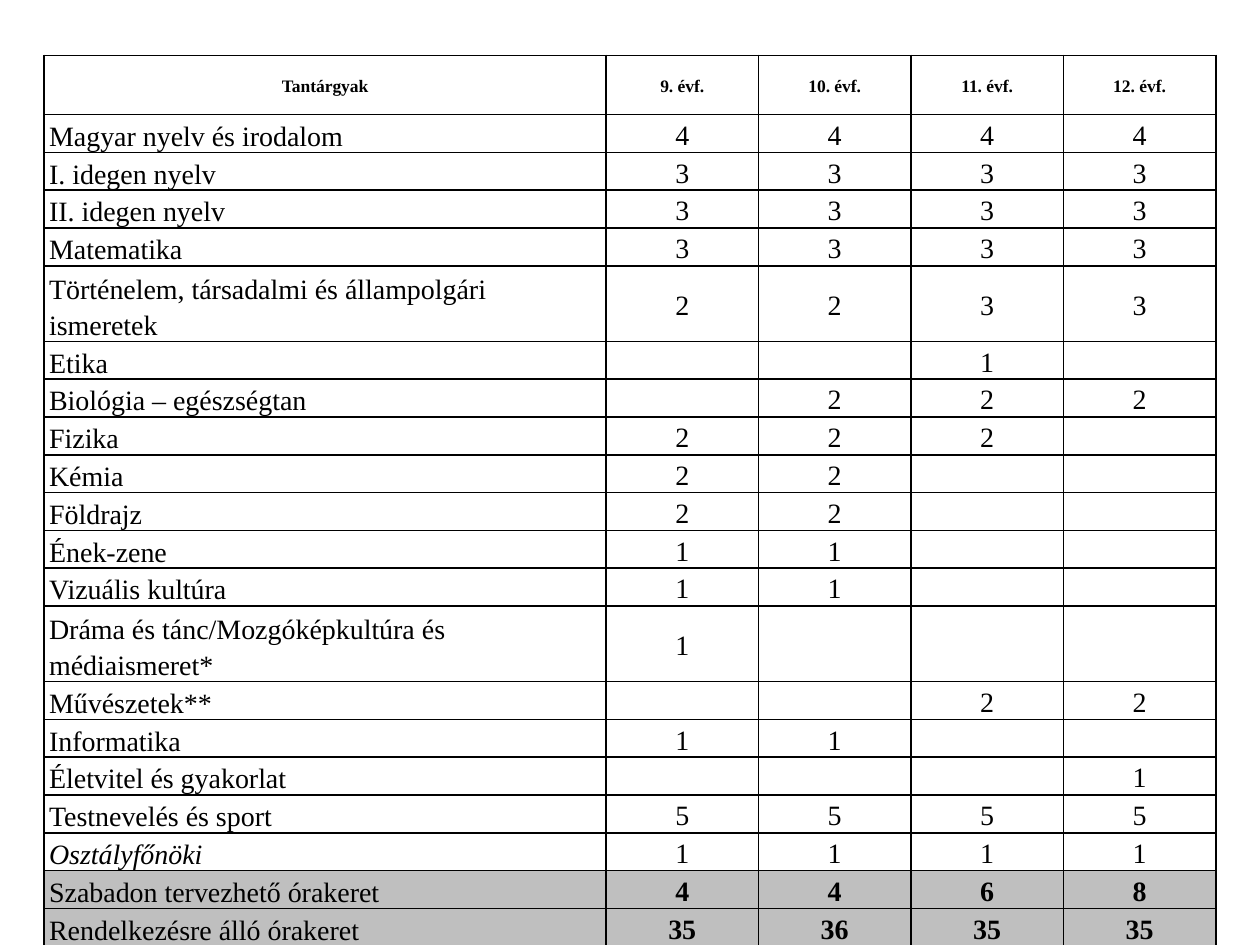
from dataclasses import dataclass

from lxml import etree
from pptx import Presentation
from pptx import util as u
from pptx.dml.color import RGBColor
from pptx.enum import text
from pptx.oxml import ns

PX = u.Inches(1) // 100
BLACK = RGBColor(0x00, 0x00, 0x00)
GREY = RGBColor(0xBF, 0xBF, 0xBF)
FONT = "Times New Roman"
LEFT, TOP = 35, 44
SUBJECT_WIDTH, GRADE_WIDTH = 446, 121
HEADER_HEIGHT, LINE_HEIGHT = 47, 30
SIDE_MARGIN = 4
HEADINGS = ["Tantárgyak", "9. évf.", "10. évf.", "11. évf.", "12. évf."]


@dataclass(frozen=True)
class Subject:
    name: str
    hours: tuple[str, str, str, str]
    lines: int = 1
    italic: bool = False
    summary: bool = False


SUBJECTS = [
    Subject("Magyar nyelv és irodalom", ("4", "4", "4", "4")),
    Subject("I. idegen nyelv", ("3", "3", "3", "3")),
    Subject("II. idegen nyelv", ("3", "3", "3", "3")),
    Subject("Matematika", ("3", "3", "3", "3")),
    Subject("Történelem, társadalmi és állampolgári ismeretek", ("2", "2", "3", "3"), lines=2),
    Subject("Etika", ("", "", "1", "")),
    Subject("Biológia – egészségtan", ("", "2", "2", "2")),
    Subject("Fizika", ("2", "2", "2", "")),
    Subject("Kémia", ("2", "2", "", "")),
    Subject("Földrajz", ("2", "2", "", "")),
    Subject("Ének-zene", ("1", "1", "", "")),
    Subject("Vizuális kultúra", ("1", "1", "", "")),
    Subject("Dráma és tánc/Mozgóképkultúra és médiaismeret*", ("1", "", "", ""), lines=2),
    Subject("Művészetek**", ("", "", "2", "2")),
    Subject("Informatika", ("1", "1", "", "")),
    Subject("Életvitel és gyakorlat", ("", "", "", "1")),
    Subject("Testnevelés és sport", ("5", "5", "5", "5")),
    Subject("Osztályfőnöki", ("1", "1", "1", "1"), italic=True),
    Subject("Szabadon tervezhető órakeret", ("4", "4", "6", "8"), summary=True),
    Subject("Rendelkezésre álló órakeret", ("35", "36", "35", "35"), summary=True),
]


def add_borders(cell) -> None:
    properties = cell._tc.get_or_add_tcPr()
    for side in ("a:lnL", "a:lnR", "a:lnT", "a:lnB"):
        line = etree.SubElement(properties, ns.qn(side), w=str(u.Pt(1)))
        fill = etree.SubElement(line, ns.qn("a:solidFill"))
        etree.SubElement(fill, ns.qn("a:srgbClr"), val=str(BLACK))


def write_text(cell, content: str, *, size: int = 16, bold: bool = False,
               italic: bool = False, centred: bool = True) -> None:
    para = cell.text_frame.paragraphs[0]
    para.line_spacing = 1.15
    para.alignment = text.PP_ALIGN.CENTER if centred else text.PP_ALIGN.LEFT
    if not content:
        etree.SubElement(para._p, ns.qn("a:endParaRPr"), sz=str(size * 100))
        return
    span = para.add_run()
    span.text = content
    span.font.name = FONT
    span.font.size = u.Pt(size)
    span.font.bold = bold
    span.font.italic = italic
    span.font.color.rgb = BLACK


def format_cell(cell, *, bottom: bool = False, shaded: bool = False) -> None:
    cell.margin_left = cell.margin_right = SIDE_MARGIN * PX
    cell.margin_top = cell.margin_bottom = 0
    cell.vertical_anchor = text.MSO_ANCHOR.BOTTOM if bottom else text.MSO_ANCHOR.MIDDLE
    add_borders(cell)
    if shaded:
        cell.fill.solid()
        cell.fill.fore_color.rgb = GREY
    else:
        cell.fill.background()


def fill_subject(table, row: int, subject: Subject) -> None:
    for column, content in enumerate((subject.name, *subject.hours)):
        cell = table.cell(row, column)
        is_name = column == 0
        format_cell(cell, bottom=is_name, shaded=subject.summary)
        write_text(cell, content, bold=subject.summary and not is_name,
                   italic=subject.italic and is_name, centred=not is_name)


def add_timetable(page) -> None:
    widths = [SUBJECT_WIDTH] + [GRADE_WIDTH] * 4
    heights = [HEADER_HEIGHT] + [subject.lines * LINE_HEIGHT for subject in SUBJECTS]
    frame = page.shapes.add_table(len(heights), len(widths), LEFT * PX, TOP * PX,
                                  sum(widths) * PX, sum(heights) * PX)
    table = frame.table
    table.first_row = table.horz_banding = False
    for column, width in zip(table.columns, widths):
        column.width = width * PX
    for row, height in zip(table.rows, heights):
        row.height = height * PX
    for column, heading in enumerate(HEADINGS):
        cell = table.cell(0, column)
        format_cell(cell)
        write_text(cell, heading, size=10, bold=True)
    for row, subject in enumerate(SUBJECTS, start=1):
        fill_subject(table, row, subject)


def main() -> None:
    deck = Presentation()
    deck.slide_width, deck.slide_height = 1000 * PX, 750 * PX
    page = deck.slides.add_slide(deck.slide_layouts[6])
    add_timetable(page)
    deck.save("out.pptx")


if __name__ == "__main__":
    main()
